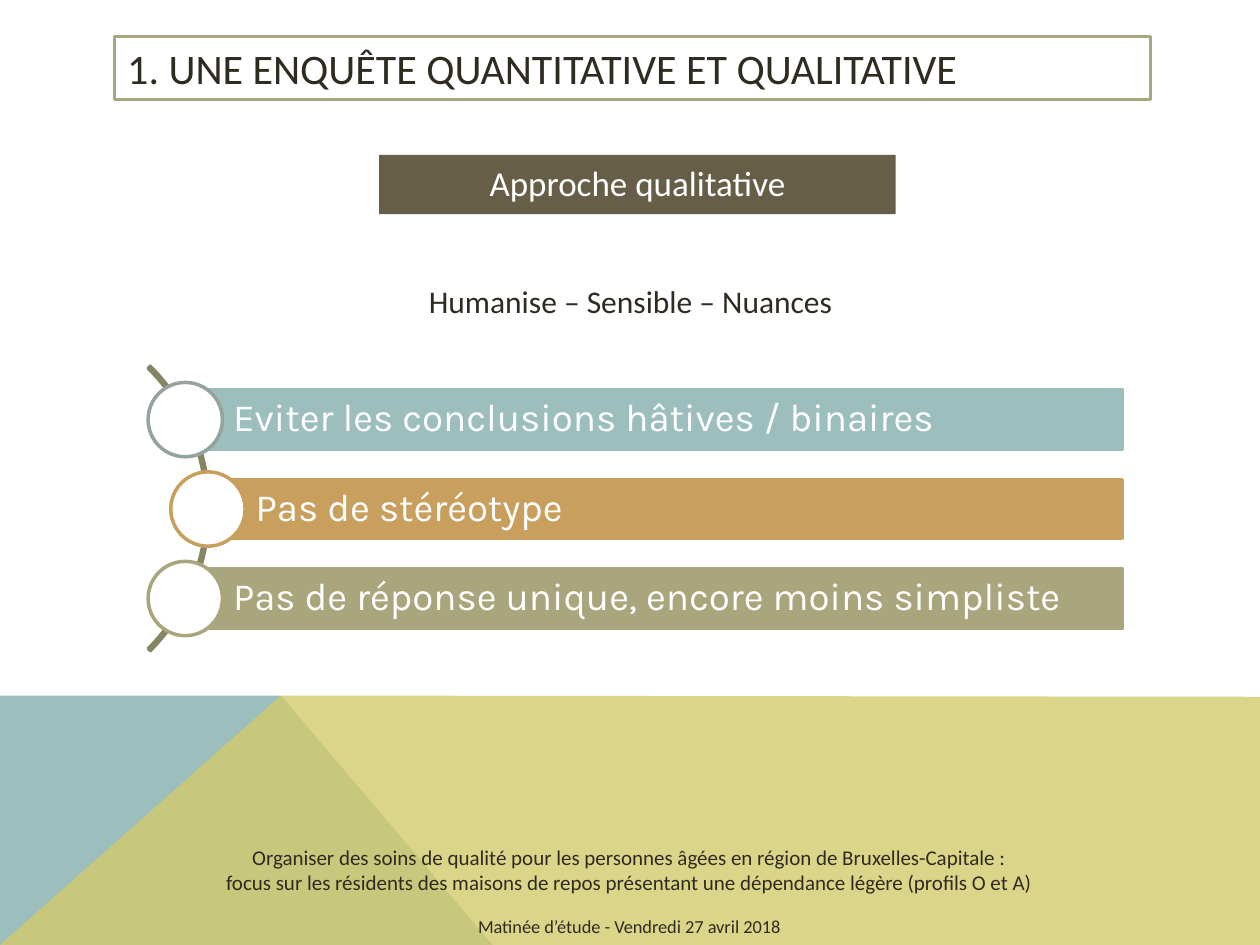
from pptx import Presentation
from pptx import util as u
from pptx.dml.color import RGBColor
from pptx.enum import shapes, text
from pptx.oxml.ns import qn
from lxml import etree

COLOURS = {
    "white": "FFFFFF", "ink": "2F2B20", "brown": "675E47", "teal": "9CBEBD",
    "yellow": "D2CB6C", "olive": "A9A57C", "ochre": "C89F5D",
    "grey": "95A39D", "arc": "878463",
}


def colour(name):
    return RGBColor.from_string(COLOURS[name])


def write(shape, lines, size=18, ink="ink", font="Calibri", align="CENTER",
          anchor="TOP", insets=(0.1, 0.05, 0.1, 0.05), spacing=None):
    frame = shape.text_frame
    frame.word_wrap = True
    frame.auto_size = text.MSO_AUTO_SIZE.NONE
    frame.vertical_anchor = getattr(text.MSO_ANCHOR, anchor)
    (frame.margin_left, frame.margin_top,
     frame.margin_right, frame.margin_bottom) = map(u.Inches, insets)
    for index, line in enumerate(lines):
        paragraph = frame.add_paragraph() if index else frame.paragraphs[0]
        paragraph.alignment = getattr(text.PP_ALIGN, align)
        paragraph.line_spacing = spacing
        run = paragraph.add_run()
        run.text = line
        run.font.name, run.font.size = font, u.Pt(size)
        run.font.color.rgb = colour(ink)
    return frame


class SlideBuilder:
    """Hold the presentation style and the slide being built."""

    def __init__(self, presentation):
        self.slide = presentation.slides.add_slide(presentation.slide_layouts[5])
        self.line_width = u.Pt(2)

    def paint(self, shape, fill=None, line=None):
        if fill:
            shape.fill.solid()
            shape.fill.fore_color.rgb = colour(fill)
        else:
            shape.fill.background()
        if line:
            shape.line.color.rgb = colour(line)
            shape.line.width = self.line_width
        else:
            shape.line.fill.background()

    def title(self, wording, box):
        title = self.slide.shapes.title
        title.left, title.top, title.width, title.height = map(u.Inches, box)
        self.paint(title, "white", "olive")
        write(title, [wording], size=24, align="LEFT", anchor="MIDDLE")

    def shape(self, kind, box, fill=None, line=None):
        shape = self.slide.shapes.add_shape(
            getattr(shapes.MSO_SHAPE, kind), *map(u.Inches, box))
        shape.shadow.inherit = False
        self.paint(shape, fill, line)
        return shape

    def textbox(self, lines, box, **style):
        textbox = self.slide.shapes.add_textbox(*map(u.Inches, box))
        return write(textbox, lines, **style)

    def polygon(self, points, fill, opacity=100):
        corners = [(u.Inches(x), u.Inches(y)) for x, y in points]
        builder = self.slide.shapes.build_freeform(*corners[0])
        builder.add_line_segments(corners[1:], close=True)
        polygon = builder.convert_to_shape()
        polygon.shadow.inherit = False
        self.paint(polygon, fill)
        if opacity < 100:
            tint = polygon._element.spPr.find(qn("a:solidFill"))[0]
            etree.SubElement(tint, qn("a:alpha"), val=str(opacity * 1000))

    def bullet_bar(self, wording, left, middle, fill, ring):
        height, right, diameter = 0.47, 8.91, 0.59
        bar = self.shape("RECTANGLE", (left, middle - height / 2, right - left, height),
                         fill, fill)
        write(bar, [wording], size=22, ink="white", font="Karla", align="LEFT",
              anchor="MIDDLE", insets=(0.38, 0.06, 0.06, 0.06), spacing=0.9)
        self.shape("OVAL", (left - diameter / 2, middle - diameter / 2,
                            diameter, diameter), "white", ring)


def main():
    presentation = Presentation()
    presentation.slide_width, presentation.slide_height = u.Inches(10), u.Inches(7.5)
    builder = SlideBuilder(presentation)

    builder.polygon([(0, 7.5), (0, 5.52), (2.23, 5.52), (3.91, 7.5)], "teal")
    builder.polygon([(0, 7.5), (2.23, 5.52), (10, 5.53), (10, 7.5)], "yellow", 80)

    heading = builder.shape("RECTANGLE", (3.01, 1.23, 4.1, 0.47), "brown")
    write(heading, ["Approche qualitative"], size=20, ink="white")
    builder.title("1. UNE ENQUÊTE QUANTITATIVE ET QUALITATIVE", (0.91, 0.29, 8.22, 0.5))
    builder.textbox(["Humanise – Sensible – Nuances"], (0.83, 2.19, 8.35, 0.47))

    footer = builder.textbox([
        "Organiser des soins de qualité pour les personnes âgées en région de Bruxelles-Capitale :",
        "focus sur les résidents des maisons de repos présentant une dépendance légère (profils O et A)",
        "Matinée d’étude - Vendredi 27 avril 2018",
    ], (-0.01, 6.65, 10.01, 0.85), size=12)
    event = footer.paragraphs[-1]
    event.space_before = u.Pt(12)
    event.runs[0].font.size = u.Pt(10.5)

    arc = builder.shape("BLOCK_ARC", (-1.53, 2.44, 3.19, 3.19), line="arc")
    for index, value in enumerate((189, 27, 0.007)):
        arc.adjustments[index] = value

    bars = [
        ("Eviter les conclusions hâtives / binaires", 1.47, "teal", "grey"),
        ("Pas de stéréotype", 1.65, "ochre", "ochre"),
        ("Pas de réponse unique, encore moins simpliste", 1.47, "olive", "olive"),
    ]
    for row, (wording, left, fill, ring) in enumerate(bars):
        builder.bullet_bar(wording, left, 3.33 + 0.71 * row, fill, ring)

    presentation.save("out.pptx")


if __name__ == "__main__":
    main()
